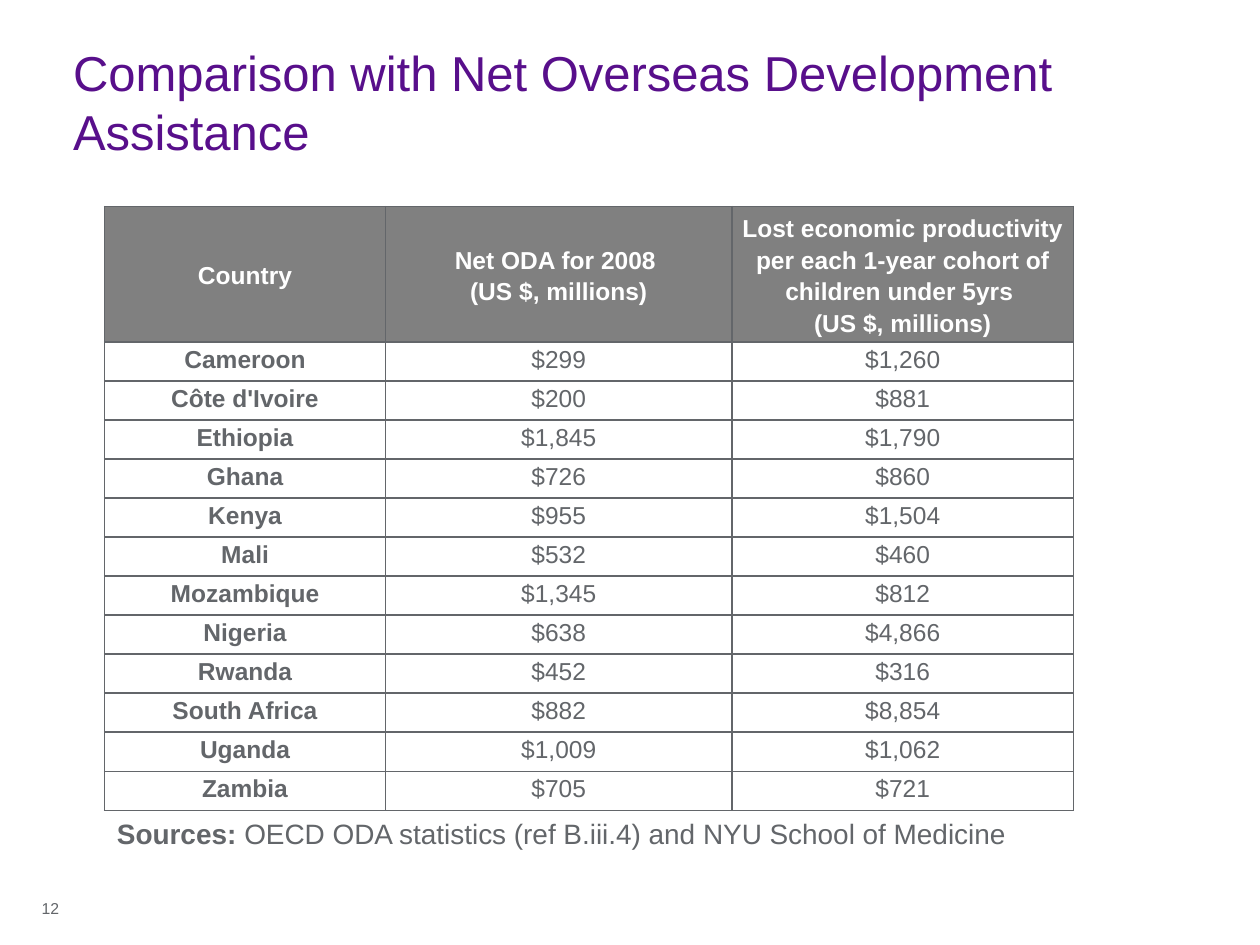
from lxml import etree
from pptx import Presentation
from pptx.dml.color import RGBColor
from pptx.enum import text
from pptx.oxml import ns
from pptx.util import Inches, Pt

COLORS = {"title": "580F8B", "body": "63666A", "header": "808080", "white": "FFFFFF"}

HEADINGS = [
    "Country",
    "Net ODA for 2008 \n(US $, millions)",
    "Lost economic productivity per each 1-year cohort of children under 5yrs \n(US $, millions)",
]
COUNTRIES = [
    ("Cameroon", 299, 1260),
    ("Côte d'Ivoire", 200, 881),
    ("Ethiopia", 1845, 1790),
    ("Ghana", 726, 860),
    ("Kenya", 955, 1504),
    ("Mali", 532, 460),
    ("Mozambique", 1345, 812),
    ("Nigeria", 638, 4866),
    ("Rwanda", 452, 316),
    ("South Africa", 882, 8854),
    ("Uganda", 1009, 1062),
    ("Zambia", 705, 721),
]


class SlideBuilder:
    """Draws styled text and tables on the current slide."""

    def __init__(self, slide, font="Arial"):
        self.slide = slide
        self.font = font

    def style(self, run, size, color, bold=False):
        run.font.name = self.font
        run.font.size = Pt(size)
        run.font.bold = bold
        run.font.color.rgb = RGBColor.from_string(COLORS[color])

    def textbox(self, place, parts, size, color="body", align=text.PP_ALIGN.LEFT, margins=(0, 0)):
        frame = self.slide.shapes.add_textbox(*map(Inches, place)).text_frame
        frame.word_wrap = True
        frame.margin_left = frame.margin_right = Inches(margins[0])
        frame.margin_top = frame.margin_bottom = Inches(margins[1])
        paragraph = frame.paragraphs[0]
        paragraph.alignment = align
        for words, bold in parts:
            run = paragraph.add_run()
            run.text = words
            self.style(run, size, color, bold)

    def borders(self, cell, color, width=1):
        properties = cell._tc.get_or_add_tcPr()
        for side in ("lnL", "lnR", "lnT", "lnB"):
            line = etree.SubElement(properties, ns.qn(f"a:{side}"), w=str(Pt(width)))
            fill = etree.SubElement(line, ns.qn("a:solidFill"))
            etree.SubElement(fill, ns.qn("a:srgbClr"), val=COLORS[color])

    def cell(self, cell, words, fill, color, bold, anchor):
        self.borders(cell, "body")
        cell.fill.solid()
        cell.fill.fore_color.rgb = RGBColor.from_string(COLORS[fill])
        cell.margin_left = cell.margin_right = Inches(0.07)
        cell.margin_top = cell.margin_bottom = 0
        cell.vertical_anchor = anchor
        cell.text_frame.text = words
        for paragraph in cell.text_frame.paragraphs:
            paragraph.alignment = text.PP_ALIGN.CENTER
            paragraph.line_spacing = 1.15
            for run in paragraph.runs:
                self.style(run, 14, color, bold)

    def table(self, left, top, widths, header_height, row_height, headings, rows):
        height = header_height + row_height * len(rows)
        table = self.slide.shapes.add_table(
            len(rows) + 1, len(widths),
            Inches(left), Inches(top), Inches(sum(widths)), Inches(height),
        ).table
        table.horz_banding = False
        for column, width in zip(table.columns, widths):
            column.width = Inches(width)
        for index, row in enumerate(table.rows):
            row.height = Inches(row_height if index else header_height)
        for column, heading in enumerate(headings):
            self.cell(table.cell(0, column), heading, "header", "white", True,
                      text.MSO_ANCHOR.MIDDLE)
        for index, (country, *amounts) in enumerate(rows, 1):
            values = [country] + [f"${amount:,}" for amount in amounts]
            for column, value in enumerate(values):
                self.cell(table.cell(index, column), value, "white", "body", column == 0,
                          text.MSO_ANCHOR.TOP)


def main():
    presentation = Presentation()
    presentation.slide_width = Inches(10)
    presentation.slide_height = Inches(7.5)
    builder = SlideBuilder(presentation.slides.add_slide(presentation.slide_layouts[6]))

    builder.textbox((0.58, 0.34, 8.83, 1.05),
                    [("Comparison with Net Overseas Development Assistance", False)],
                    28, "title")
    builder.textbox((0, 7.13, 0.47, 0.19), [("12", False)], 9, align=text.PP_ALIGN.RIGHT)
    builder.table(0.83, 1.64, (2.23, 2.75, 2.71), 0.94, 0.31, HEADINGS, COUNTRIES)
    builder.textbox((0.83, 6.43, 7.42, 0.37),
                    [("Sources: ", True),
                     ("OECD ODA statistics (ref B.iii.4) and NYU School of Medicine", False)],
                    16, margins=(0.1, 0.05))
    presentation.save("out.pptx")


if __name__ == "__main__":
    main()
